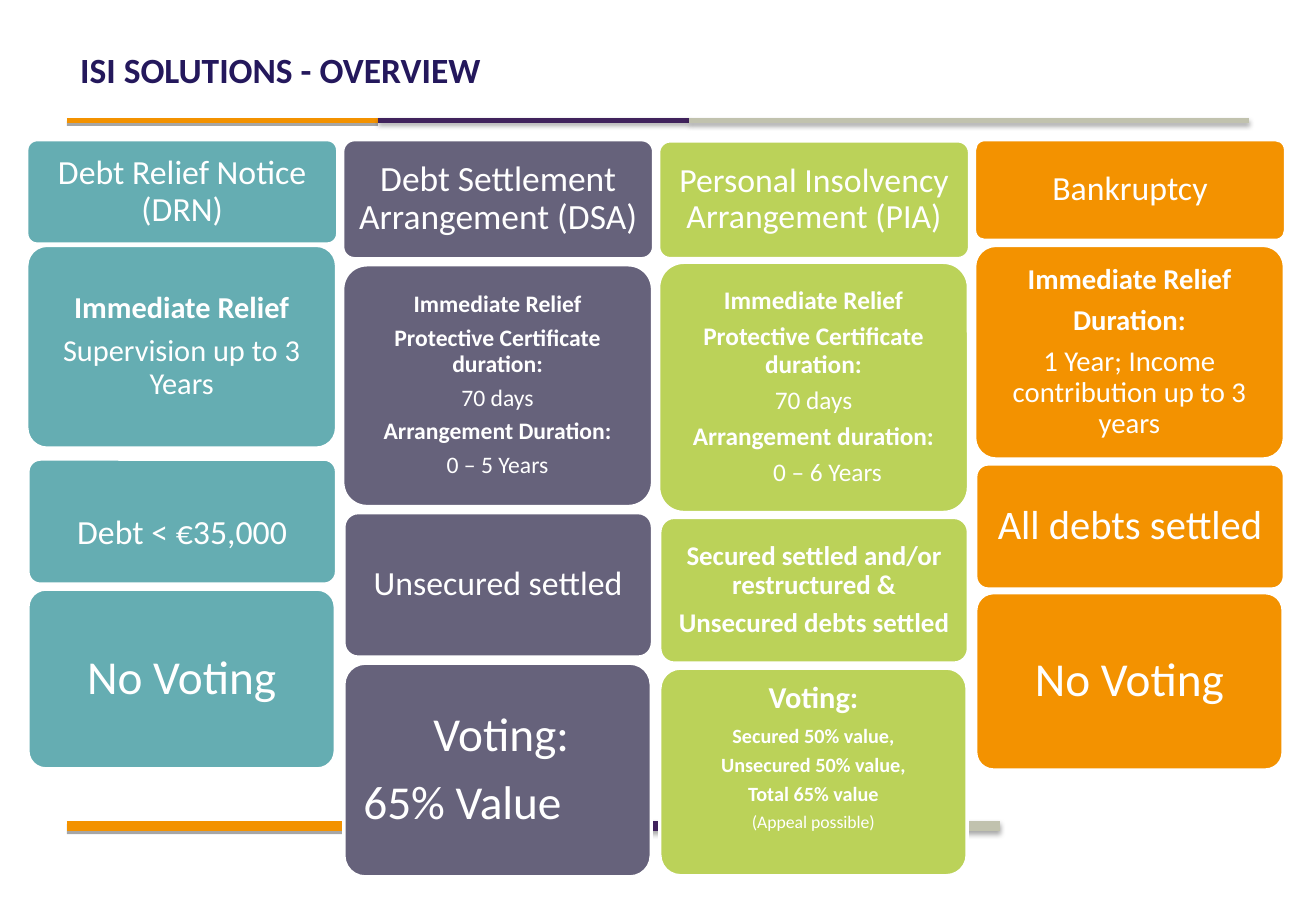
from dataclasses import dataclass

from lxml.etree import SubElement
from pptx import Presentation
from pptx.dml.color import RGBColor
from pptx.enum.shapes import MSO_CONNECTOR, MSO_SHAPE
from pptx.enum.text import MSO_ANCHOR, MSO_AUTO_SIZE, PP_ALIGN
from pptx.oxml.ns import qn
from pptx.util import Pt

PX = 9144  # 100 px to the inch
FONT = "Calibri"
TEAL, SLATE, LIME, ORANGE = "65ADB2", "66627B", "BBD259", "F39200"
PURPLE, STONE, NAVY, WHITE = "40225C", "C1C2AE", "24185C", "FFFFFF"
COLUMN_LEFT, COLUMN_STEP, CARD_WIDTH = 22, 260, 256


@dataclass
class Line:
    text: str
    size: float
    bold: bool = False
    indent: int = 0
    align: PP_ALIGN = PP_ALIGN.CENTER


@dataclass
class Card:
    top: int
    height: int
    inset: int
    lines: list[Line]
    anchor: MSO_ANCHOR = MSO_ANCHOR.MIDDLE
    drop: int = 0


@dataclass
class Column:
    color: str
    cards: list[Card]


@dataclass
class Bar:
    y: int
    weight: int
    stops: list[int]


def px(n: int) -> int:
    return n * PX


def rgb(color: str) -> RGBColor:
    return RGBColor.from_string(color)


BARS = [
    Bar(99, 3, [55, 311, 567, 1028]),
    Bar(680, 6, [55, 311, 567, 823]),
]

COLUMNS = [
    Column(TEAL, [
        Card(115, 86, 8, [Line("Debt Relief Notice (DRN)", 20)]),
        Card(202, 167, 7, [Line("Immediate Relief", 18, True),
                           Line("Supervision up to 3 Years", 18)]),
        Card(378, 103, 8, [Line("Debt < €35,000", 20)], drop=20),
        Card(485, 148, 12, [Line("No Voting", 28)]),
    ]),
    Column(SLATE, [
        Card(115, 98, 9, [Line("Debt Settlement Arrangement (DSA)", 21)]),
        Card(218, 199, 6, [Line("Immediate Relief", 14, True),
                           Line("Protective Certificate duration:", 14, True),
                           Line("70 days", 14),
                           Line("Arrangement Duration:", 14, True),
                           Line("0 – 5 Years", 14)]),
        Card(422, 119, 8, [Line("Unsecured settled", 20)]),
        Card(546, 176, 11, [Line("Voting:", 28, indent=6),
                            Line("65% Value", 28, align=PP_ALIGN.LEFT)]),
    ]),
    Column(LIME, [
        Card(116, 97, 8, [Line("Personal Insolvency Arrangement (PIA)", 20)]),
        Card(216, 206, 6, [Line("Immediate Relief", 15, True),
                           Line("Protective Certificate duration:", 15, True),
                           Line("70 days", 15),
                           Line("Arrangement duration:", 15, True),
                           Line("0 – 6 Years", 15, indent=23)]),
        Card(426, 120, 7, [Line("Secured settled and/or restructured &", 16, True),
                           Line("Unsecured debts settled", 16, True)]),
        Card(550, 171, 7, [Line("Voting:", 18, True),
                           Line("Secured 50% value,", 12, True),
                           Line("Unsecured 50% value,", 12, True),
                           Line("Total 65% value", 12, True),
                           Line("(Appeal possible)", 10.5)], MSO_ANCHOR.TOP),
    ]),
    Column(ORANGE, [
        Card(115, 83, 8, [Line("Bankruptcy", 20)]),
        Card(202, 176, 7, [Line("Immediate Relief", 17, True),
                           Line("Duration:", 17, True),
                           Line("1 Year; Income contribution up to 3 years", 17)]),
        Card(382, 103, 10, [Line("All debts settled", 24)]),
        Card(488, 146, 12, [Line("No Voting", 28)]),
    ]),
]


def add_shadow(line, blur: float) -> None:
    effects = SubElement(line._element.spPr, qn("a:effectLst"))
    shadow = SubElement(effects, qn("a:outerShdw"), blurRad=str(Pt(blur)),
                        dist=str(Pt(1.8)), dir="5400000", rotWithShape="0")
    color = SubElement(shadow, qn("a:srgbClr"), val="000000")
    SubElement(color, qn("a:alpha"), val="35000")


def add_bar(s, bar: Bar) -> None:
    spans = zip(bar.stops, bar.stops[1:], (ORANGE, PURPLE, STONE), (0, 3.1, 3.1))
    for left, right, color, blur in spans:
        line = s.shapes.add_connector(MSO_CONNECTOR.STRAIGHT, px(left), px(bar.y),
                                      px(right), px(bar.y))
        line.line.color.rgb = rgb(color)
        line.line.width = Pt(bar.weight)
        add_shadow(line, blur)


def set_insets(tf, side: int, top: int, bottom: int) -> None:
    tf.margin_left = tf.margin_right = px(side)
    tf.margin_top, tf.margin_bottom = px(top), px(bottom)


def style_run(r, size: float, color: str, bold: bool) -> None:
    r.font.name = FONT
    r.font.size = Pt(size)
    r.font.bold = bold
    r.font.color.rgb = rgb(color)


def add_title(s, text: str) -> None:
    title = s.shapes.title
    title.left, title.top, title.width, title.height = px(54), px(30), px(975), px(54)
    tf = title.text_frame
    tf.text = text
    tf.auto_size = MSO_AUTO_SIZE.NONE
    tf.vertical_anchor = MSO_ANCHOR.MIDDLE
    set_insets(tf, 12, 6, 6)
    p = tf.paragraphs[0]
    p.alignment = PP_ALIGN.LEFT
    style_run(p.runs[0], 21, NAVY, True)


def add_card(s, card: Card, left: int, width: int, color: str) -> None:
    sp = s.shapes.add_shape(MSO_SHAPE.ROUNDED_RECTANGLE, px(left), px(card.top),
                            px(width), px(card.height))
    sp.adjustments[0] = 0.1
    sp.shadow.inherit = False
    sp.fill.solid()
    sp.fill.fore_color.rgb = rgb(color)
    sp.line.color.rgb = rgb(WHITE)
    sp.line.width = Pt(2)
    tf = sp.text_frame
    tf.word_wrap = True
    tf.vertical_anchor = card.anchor
    set_insets(tf, card.inset, card.inset + card.drop, card.inset)
    for i, line in enumerate(card.lines):
        p = tf.add_paragraph() if i else tf.paragraphs[0]
        p.text = line.text
        p.alignment = line.align
        p.line_spacing = 0.9
        p.space_after = Pt(0.35 * line.size)
        if line.indent:
            p._p.get_or_add_pPr().set("marL", str(px(line.indent)))
        style_run(p.runs[0], line.size, WHITE, line.bold)


def main() -> None:
    prs = Presentation()
    prs.slide_width, prs.slide_height = px(1083), px(750)
    s = prs.slides.add_slide(prs.slide_layouts[5])

    # Coloured rules behind the content
    for bar in BARS:
        add_bar(s, bar)

    add_title(s, "ISI SOLUTIONS - OVERVIEW")

    # Four columns of cards, each row slightly narrower
    for i, column in enumerate(COLUMNS):
        for row, card in enumerate(column.cards):
            left = COLUMN_LEFT + i * COLUMN_STEP + row // 2
            add_card(s, card, left, CARD_WIDTH - row, column.color)

    prs.save("out.pptx")


if __name__ == "__main__":
    main()
